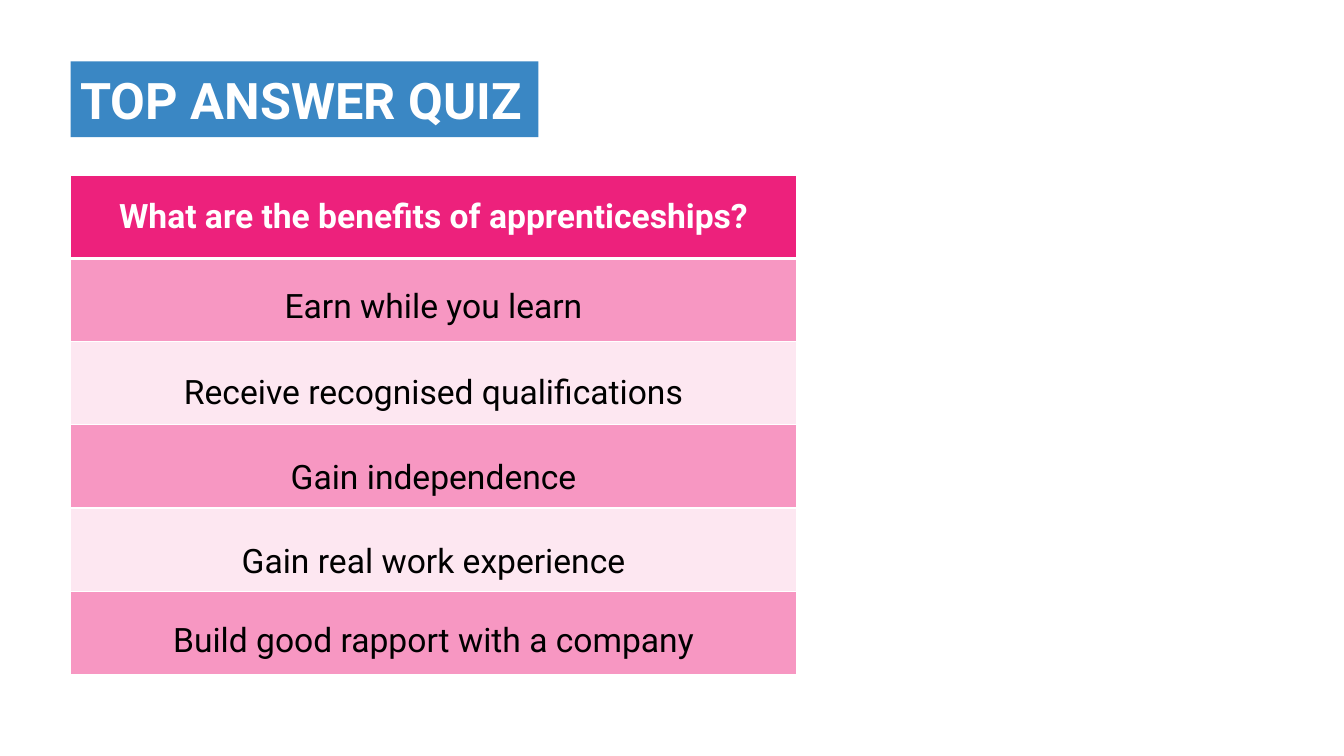
from lxml import etree
from pptx import Presentation
from pptx.dml.color import RGBColor
from pptx.enum.shapes import MSO_SHAPE
from pptx.enum.text import MSO_ANCHOR, MSO_AUTO_SIZE, PP_ALIGN
from pptx.oxml.ns import qn
from pptx.util import Inches, Pt

RECTANGLE = MSO_SHAPE.RECTANGLE
MIDDLE = MSO_ANCHOR.MIDDLE
CENTER, LEFT = PP_ALIGN.CENTER, PP_ALIGN.LEFT
GROW = MSO_AUTO_SIZE.SHAPE_TO_FIT_TEXT

WHITE, BLACK, BLUE = "FFFFFF", "000000", "3A87C4"
HEADER_PINK, DARK_PINK, LIGHT_PINK = "ED217C", "F797C2", "FDE7F1"

MARGIN = Inches(0.7)
COLUMN_WIDTH = Inches(7.2)
TABLE_TOP = Inches(1.74)
TABLE_HEIGHT = Inches(4.95)

QUESTION = "What are the benefits of apprenticeships?"
ANSWERS = [
    ("Earn while you learn", 2.78),
    ("Receive recognised qualifications", 3.63),
    ("Gain independence", 4.47),
    ("Gain real work experience", 5.31),
    ("Build good rapport with a company", 6.09),
]


def paint(fill, color):
    fill.solid()
    fill.fore_color.rgb = RGBColor.from_string(color)


def write(text_frame, text, size, color, bold=False, align=CENTER):
    paragraph = text_frame.paragraphs[0]
    paragraph.alignment = align
    run = paragraph.add_run()
    run.text = text
    run.font.name = "Roboto"
    run.font.size = Pt(size)
    run.font.bold = bold
    run.font.color.rgb = RGBColor.from_string(color)


presentation = Presentation()
presentation.slide_width = Inches(13.33)
presentation.slide_height = Inches(7.5)
slide = presentation.slides.add_slide(presentation.slide_layouts[6])

# Title
title = slide.shapes.add_shape(RECTANGLE, MARGIN, Inches(0.61), Inches(4.64), Inches(0.75))
title.shadow.inherit = False
paint(title.fill, BLUE)
title.line.fill.background()
title.text_frame.vertical_anchor = MIDDLE
write(title.text_frame, "TOP ANSWER QUIZ", 36, WHITE, bold=True, align=LEFT)

# Answer board: a header row and one banded row per answer
row_count = len(ANSWERS) + 1
board = slide.shapes.add_table(
    row_count, 1, MARGIN, TABLE_TOP, COLUMN_WIDTH, TABLE_HEIGHT
).table
for row in range(row_count):
    cell = board.cell(row, 0)
    properties = cell._tc.get_or_add_tcPr()
    for side in ("lnL", "lnR", "lnT", "lnB"):
        thick = (row, side) in ((0, "lnB"), (1, "lnT"))
        border = etree.SubElement(properties, qn(f"a:{side}"), w=str(Pt(3 if thick else 1)))
        border_fill = etree.SubElement(border, qn("a:solidFill"))
        etree.SubElement(border_fill, qn("a:srgbClr"), val=WHITE)
    if row == 0:
        paint(cell.fill, HEADER_PINK)
    else:
        paint(cell.fill, DARK_PINK if row % 2 else LIGHT_PINK)

header = board.cell(0, 0)
header.vertical_anchor = MIDDLE
write(header.text_frame, QUESTION, 24, WHITE, bold=True)

# Answers lie over the board as separate boxes, so each can be revealed in turn
for answer, top in ANSWERS:
    box = slide.shapes.add_textbox(MARGIN, Inches(top), COLUMN_WIDTH, Inches(0.5))
    box.text_frame.word_wrap = True
    box.text_frame.auto_size = GROW
    write(box.text_frame, answer, 24, BLACK)

presentation.save("out.pptx")
